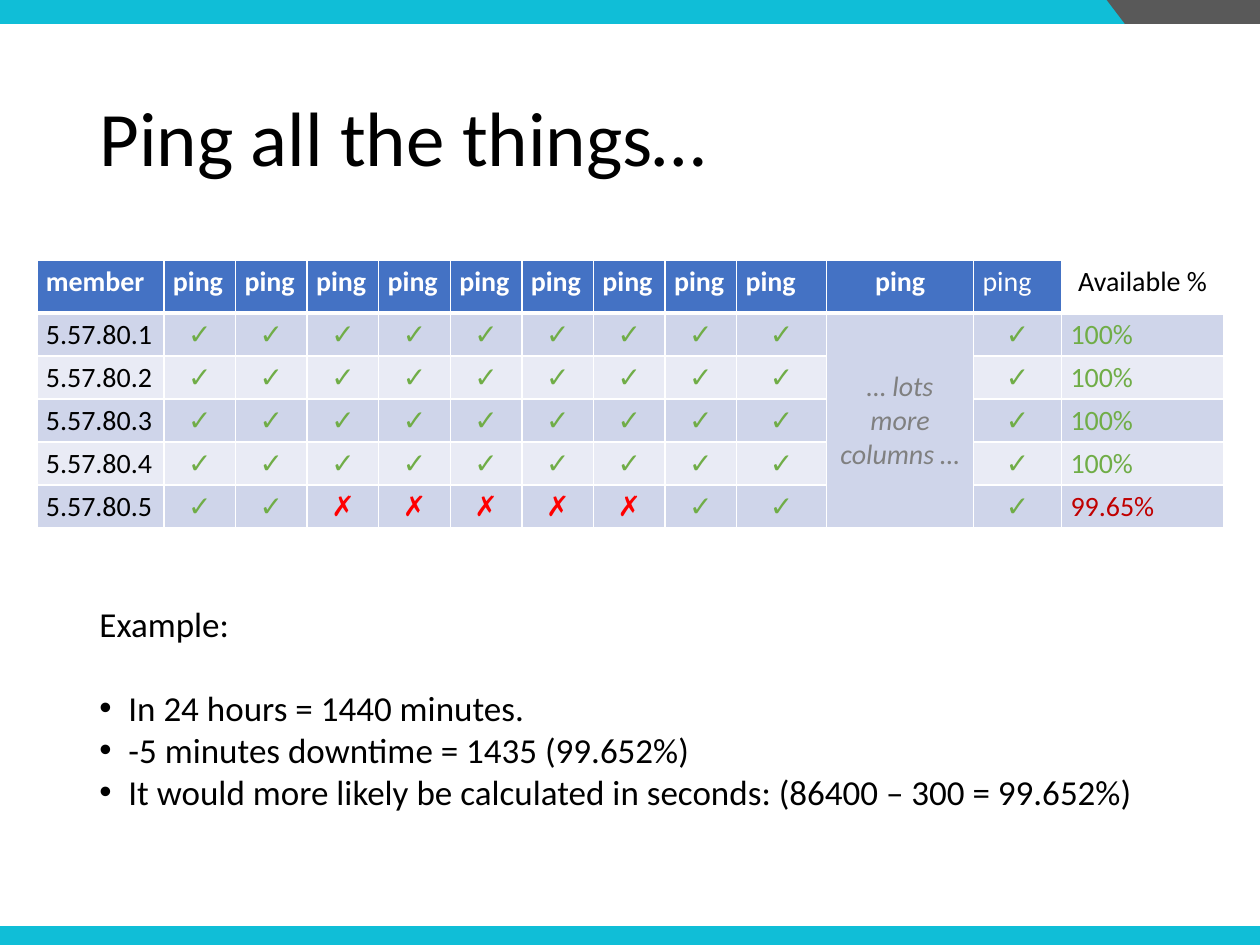
from dataclasses import dataclass

from lxml import etree
from pptx import Presentation
from pptx.dml.color import RGBColor
from pptx.enum import shapes, text
from pptx.oxml.ns import qn
from pptx.util import Emu, Pt

EMU_PER_PX = 914400 // 126
FONT = "Calibri"

CYAN = RGBColor(0x10, 0xBE, 0xD7)
DARK_GRAY = RGBColor(0x59, 0x59, 0x59)
BLACK = RGBColor(0x00, 0x00, 0x00)
WHITE = RGBColor(0xFF, 0xFF, 0xFF)
HEADER_BLUE = RGBColor(0x44, 0x72, 0xC4)
BAND_DARK = RGBColor(0xCF, 0xD5, 0xEA)
BAND_LIGHT = RGBColor(0xE9, 0xEB, 0xF5)
GREEN = RGBColor(0x70, 0xAD, 0x47)
RED = RGBColor(0xFF, 0x00, 0x00)
DARK_RED = RGBColor(0xC0, 0x00, 0x00)
MUTED = RGBColor(0x80, 0x80, 0x80)

LEFT, CENTER = text.PP_ALIGN.LEFT, text.PP_ALIGN.CENTER
RECTANGLE = shapes.MSO_SHAPE.RECTANGLE
TRIANGLE = shapes.MSO_SHAPE.ISOSCELES_TRIANGLE

GOOD, BAD = "✓", "✗"
MORE_COLUMN, LATEST_COLUMN, AVAILABLE_COLUMN = 10, 11, 12
NARROW_COLUMNS, NARROW_TOTAL = 8, 573
HEADER_HEIGHT, ROW_HEIGHT = 53, 43


@dataclass(frozen=True)
class Band:
    left: int
    top: int
    width: int
    height: int
    color: RGBColor
    kind: shapes.MSO_SHAPE = RECTANGLE
    rotation: int = 0


@dataclass(frozen=True)
class Style:
    color: RGBColor
    size: int = 16
    align: text.PP_ALIGN = LEFT
    bold: bool = False
    italic: bool = False


@dataclass(frozen=True)
class Member:
    address: str
    pings: str
    available: str
    available_color: RGBColor = GREEN


BANDS = [
    Band(0, 926, 1260, 19, CYAN),
    Band(0, -1, 1260, 25, CYAN),
    Band(1125, -1, 135, 25, DARK_GRAY),
    Band(1106, -1, 38, 25, DARK_GRAY, TRIANGLE, 180),
]
MEMBERS = [Member(f"5.57.80.{n}", GOOD * 9, "100%") for n in range(1, 5)]
MEMBERS.append(Member("5.57.80.5", GOOD * 2 + BAD * 5 + GOOD * 2, "99.65%", DARK_RED))
EXAMPLE_POINTS = [
    "In 24 hours = 1440 minutes.",
    "-5 minutes downtime = 1435 (99.652%)",
    "It would more likely be calculated in seconds: (86400 – 300 = 99.652%)",
]


def px(length: int) -> Emu:
    return Emu(length * EMU_PER_PX)


def add_band(page, band: Band) -> None:
    shape = page.shapes.add_shape(
        band.kind, px(band.left), px(band.top), px(band.width), px(band.height))
    shape.rotation = band.rotation
    shape.shadow.inherit = False
    shape.fill.solid()
    shape.fill.fore_color.rgb = band.color
    shape.line.fill.background()


def write(para, words: str, style: Style) -> None:
    para.alignment = style.align
    span = para.add_run()
    span.text = words
    font = span.font
    font.name, font.size = FONT, Pt(style.size)
    font.bold, font.italic = style.bold, style.italic
    font.color.rgb = style.color


def add_text_box(page, left: int, top: int, width: int, height: int):
    box = page.shapes.add_textbox(px(left), px(top), px(width), px(height))
    box.text_frame.word_wrap = True
    return box


def add_bullet(para) -> None:
    """Give the paragraph a round bullet with a hanging indent."""
    properties = para._p.get_or_add_pPr()
    properties.set("marL", str(px(29)))
    properties.set("indent", str(-px(29)))
    etree.SubElement(properties, qn("a:buFont")).set("typeface", "Arial")
    etree.SubElement(properties, qn("a:buChar")).set("char", "•")


def set_borders(cell, bottom: int) -> None:
    """Draw white borders, one point wide except for the bottom one."""
    properties = cell._tc.get_or_add_tcPr()
    sides = {"lnL": 1, "lnR": 1, "lnT": 1, "lnB": bottom}
    for position, (side, width) in enumerate(sides.items()):
        line = etree.Element(qn(f"a:{side}"), w=str(Pt(width)))
        fill = etree.SubElement(line, qn("a:solidFill"))
        etree.SubElement(fill, qn("a:srgbClr")).set("val", str(WHITE))
        properties.insert(position, line)


def fill_cell(cell, words: str, style: Style, fill: RGBColor, bottom: int = 1) -> None:
    cell.margin_left = cell.margin_right = px(9)
    cell.margin_top, cell.margin_bottom = px(5), px(4)
    cell.fill.solid()
    cell.fill.fore_color.rgb = fill
    set_borders(cell, bottom)
    if words:
        write(cell.text_frame.paragraphs[0], words, style)


def fill_header(table) -> None:
    for column in range(AVAILABLE_COLUMN):
        style = Style(WHITE, align=CENTER if column == MORE_COLUMN else LEFT,
                      bold=column != LATEST_COLUMN)
        fill_cell(table.cell(0, column), "ping" if column else "member",
                  style, HEADER_BLUE, bottom=3)
    fill_cell(table.cell(0, AVAILABLE_COLUMN), "Available %",
              Style(BLACK, align=CENTER), WHITE, bottom=3)


def fill_member(table, row: int, member: Member) -> None:
    fill = BAND_DARK if row % 2 else BAND_LIGHT
    fill_cell(table.cell(row, 0), member.address, Style(BLACK), fill)
    marks = [*enumerate(member.pings, start=1), (LATEST_COLUMN, GOOD)]
    for column, mark in marks:
        color = GREEN if mark == GOOD else RED
        fill_cell(table.cell(row, column), mark, Style(color, align=CENTER), fill)
    more = "… lots more columns …" if row == 1 else ""
    fill_cell(table.cell(row, MORE_COLUMN), more,
              Style(MUTED, align=CENTER, italic=True), fill)
    fill_cell(table.cell(row, AVAILABLE_COLUMN), member.available,
              Style(member.available_color), fill)


def add_ping_table(page) -> None:
    narrow = Emu(px(NARROW_TOTAL) // NARROW_COLUMNS)
    widths = [px(127), *[narrow] * NARROW_COLUMNS, px(90), px(147), px(88), px(162)]
    heights = [HEADER_HEIGHT] + [ROW_HEIGHT] * len(MEMBERS)
    table = page.shapes.add_table(len(heights), len(widths), px(37), px(260),
                                  Emu(sum(widths)), px(sum(heights))).table
    for column, width in zip(table.columns, widths):
        column.width = width
    for row, height in zip(table.rows, heights):
        row.height = px(height)
    fill_header(table)
    for row, member in enumerate(MEMBERS, start=1):
        fill_member(table, row, member)
    more = table.cell(1, MORE_COLUMN)
    more.merge(table.cell(len(MEMBERS), MORE_COLUMN))
    more.vertical_anchor = text.MSO_ANCHOR.MIDDLE


def add_title(page) -> None:
    frame = add_text_box(page, 87, 50, 1086, 183).text_frame
    frame.vertical_anchor = text.MSO_ANCHOR.MIDDLE
    frame.paragraphs[0].line_spacing = 0.9
    write(frame.paragraphs[0], "Ping all the things…", Style(BLACK, size=44))


def add_example(page) -> None:
    frame = add_text_box(page, 87, 596, 1103, 224).text_frame
    frame.auto_size = text.MSO_AUTO_SIZE.SHAPE_TO_FIT_TEXT
    style = Style(BLACK, size=20)
    write(frame.paragraphs[0], "Example:", style)
    frame.paragraphs[0].space_after = Pt(24)
    for point in EXAMPLE_POINTS:
        para = frame.add_paragraph()
        add_bullet(para)
        write(para, point, style)


def main() -> None:
    deck = Presentation()
    deck.slide_width, deck.slide_height = px(1260), px(945)
    page = deck.slides.add_slide(deck.slide_layouts[6])
    for band in BANDS:
        add_band(page, band)
    add_title(page)
    add_ping_table(page)
    add_example(page)
    deck.save("out.pptx")


if __name__ == "__main__":
    main()
